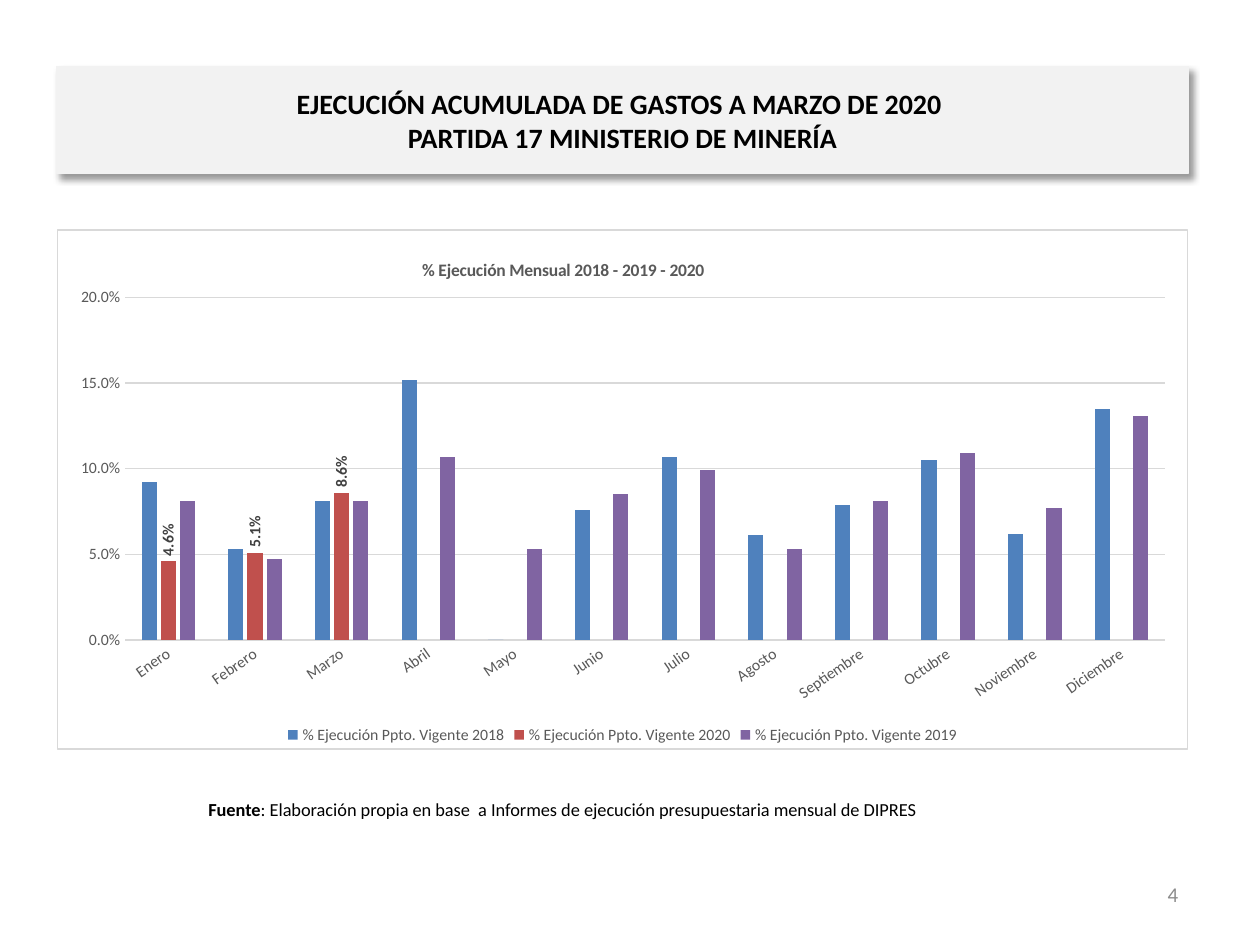
from lxml import etree
from pptx import Presentation
from pptx import util as u
from pptx.chart.data import CategoryChartData
from pptx.dml.color import RGBColor
from pptx.enum import chart as ch, shapes, text
from pptx.oxml import parse_xml
from pptx.oxml.ns import nsdecls, qn

THEME = {
    "font": "Calibri",
    "ink": "000000", "muted": "595959", "label": "404040", "page": "8C8C8C",
    "band": "F2F2F2", "rule": "D9D9D9", "paper": "FFFFFF",
    "heading_size": 16, "page_size": 12, "source_size": 10.5,
    "chart_title_size": 10, "chart_size": 9,
}

HEADING = ("EJECUCIÓN ACUMULADA DE GASTOS A MARZO DE 2020 \v"
           "PARTIDA 17 MINISTERIO DE MINERÍA")
SOURCE = [("Fuente", True),
          (": Elaboración propia en base  a Informes de ejecución "
           "presupuestaria mensual de DIPRES", False)]
PAGE = "4"
CHART_TITLE = "% Ejecución Mensual 2018 - 2019 - 2020"
MONTHS = ["Enero", "Febrero", "Marzo", "Abril", "Mayo", "Junio", "Julio",
          "Agosto", "Septiembre", "Octubre", "Noviembre", "Diciembre"]
# year, colour, monthly share of the budget
YEARS = [
    (2018, "4F81BD", [0.092, 0.053, 0.081, 0.152, 0, 0.076,
                      0.107, 0.061, 0.079, 0.105, 0.062, 0.135]),
    (2020, "C0504D", [0.046, 0.051, 0.086] + [None] * 9),
    (2019, "8064A2", [0.081, 0.047, 0.081, 0.107, 0.053, 0.085,
                      0.099, 0.053, 0.081, 0.109, 0.077, 0.131]),
]
LABELLED_YEAR = 2020
PERCENT = "0.0%"

LEFT, WIDTH = 0.45, 8.98


def box(left, top, width, height):
    return [u.Inches(n) for n in (left, top, width, height)]


def style_font(font, size, color, bold=False):
    font.name, font.size, font.bold = THEME["font"], u.Pt(size), bold
    font.color.rgb = RGBColor.from_string(color)


def write(frame, runs, size, color=THEME["ink"], align=text.PP_ALIGN.CENTER):
    """Fill a text frame with one paragraph of (wording, bold) runs."""
    frame.word_wrap = True
    frame.vertical_anchor = text.MSO_ANCHOR.MIDDLE
    paragraph = frame.paragraphs[0]
    paragraph.alignment = align
    for wording, bold in runs:
        for number, line in enumerate(wording.split("\v")):
            if number:
                paragraph.add_line_break()
            run = paragraph.add_run()
            run.text = line
            style_font(run.font, size, color, bold)


def draw_line(line, color):
    line.color.rgb = RGBColor.from_string(color)
    line.width = u.Pt(0.75)


def add_shadow(shape):
    shape.shadow.inherit = False
    effects = shape._element.spPr.find(qn("a:effectLst"))
    effects.append(parse_xml(
        f'<a:outerShdw {nsdecls("a")} blurRad="{u.Pt(4)}" dist="{u.Pt(3)}" '
        'dir="2700000" algn="tl" rotWithShape="0"><a:srgbClr val="000000">'
        '<a:alpha val="40000"/></a:srgbClr></a:outerShdw>'))


def place(parent, index, target=None, **fractions):
    """Set the manual layout of a chart part, as fractions of the chart."""
    for old in parent.findall(qn("c:layout")):
        parent.remove(old)
    layout = parse_xml(f'<c:layout {nsdecls("c")}/>')
    manual = etree.SubElement(layout, qn("c:manualLayout"))
    if target:
        etree.SubElement(manual, qn("c:layoutTarget")).set("val", target)
    for mode in ("xMode", "yMode"):
        etree.SubElement(manual, qn(f"c:{mode}")).set("val", "edge")
    for name, value in fractions.items():
        etree.SubElement(manual, qn(f"c:{name}")).set("val", str(value))
    parent.insert(index, layout)


def rotate_text(parent, degrees):
    body = parent.find(qn("c:txPr")).find(qn("a:bodyPr"))
    body.set("rot", str(degrees * 60000))
    body.set("vert", "horz")


def style_axes(chart):
    months, shares = chart.category_axis, chart.value_axis
    for axis in (months, shares):
        axis.major_tick_mark = axis.minor_tick_mark = ch.XL_TICK_MARK.NONE
        style_font(axis.tick_labels.font, THEME["chart_size"], THEME["muted"])
    draw_line(months.format.line, THEME["rule"])
    rotate_text(months._element, -35)
    shares.minimum_scale, shares.maximum_scale, shares.major_unit = 0, 0.2, 0.05
    shares.format.line.fill.background()
    draw_line(shares.major_gridlines.format.line, THEME["rule"])
    shares.tick_labels.number_format = PERCENT
    shares.tick_labels.number_format_is_linked = False


def style_series(plot):
    plot.gap_width, plot.overlap, plot.vary_by_categories = 219, -27, False
    for series, (year, color, _) in zip(plot.series, YEARS):
        series.format.fill.solid()
        series.format.fill.fore_color.rgb = RGBColor.from_string(color)
        series.invert_if_negative = False
        if year == LABELLED_YEAR:
            labels = series.data_labels
            labels.show_value = True
            labels.position = ch.XL_LABEL_POSITION.OUTSIDE_END
            labels.number_format = PERCENT
            labels.number_format_is_linked = False
            style_font(labels.font, THEME["chart_size"], THEME["label"], True)
            rotate_text(labels._element, -90)


def add_monthly_chart(slide):
    data = CategoryChartData(number_format=PERCENT)
    data.categories = MONTHS
    for year, _, shares in YEARS:
        data.add_series(f"% Ejecución Ppto. Vigente {year}", shares)
    chart = slide.shapes.add_chart(ch.XL_CHART_TYPE.COLUMN_CLUSTERED,
                                   *box(LEFT, 1.82, WIDTH, 4.13), data).chart
    style_font(chart.font, 10, THEME["ink"])
    chart.has_title = True
    write(chart.chart_title.text_frame, [(CHART_TITLE, True)],
          THEME["chart_title_size"], THEME["muted"])
    chart.has_legend = True
    chart.legend.position = ch.XL_LEGEND_POSITION.BOTTOM
    chart.legend.include_in_layout = False
    style_font(chart.legend.font, THEME["chart_size"], THEME["muted"])
    style_axes(chart)
    style_series(chart.plots[0])

    root = chart._chartSpace
    place(chart.chart_title._element, 1, x=0.32, y=0.05)
    place(root.chart.plotArea, 0, "inner", x=0.06, y=0.13, w=0.92, h=0.66)
    root.find(qn("c:txPr")).addprevious(parse_xml(
        f'<c:spPr {nsdecls("c", "a")}><a:solidFill><a:srgbClr '
        f'val="{THEME["paper"]}"/></a:solidFill><a:ln w="{u.Pt(0.75)}">'
        f'<a:solidFill><a:srgbClr val="{THEME["rule"]}"/></a:solidFill>'
        '</a:ln></c:spPr>'))


def main():
    deck = Presentation()
    deck.slide_width, deck.slide_height = u.Inches(10), u.Inches(7.5)
    slide = deck.slides.add_slide(deck.slide_layouts[6])

    page = slide.shapes.add_textbox(*box(7.12, 6.9, 2.33, 0.4))
    write(page.text_frame, [(PAGE, False)], THEME["page_size"], THEME["page"],
          text.PP_ALIGN.RIGHT)

    heading = slide.shapes.add_shape(shapes.MSO_SHAPE.RECTANGLE,
                                     *box(LEFT, 0.53, WIDTH, 0.85))
    heading.fill.solid()
    heading.fill.fore_color.rgb = RGBColor.from_string(THEME["band"])
    draw_line(heading.line, THEME["band"])
    add_shadow(heading)
    write(heading.text_frame, [(HEADING, True)], THEME["heading_size"])

    source = slide.shapes.add_textbox(*box(LEFT, 6.22, 8.03, 0.4))
    write(source.text_frame, SOURCE, THEME["source_size"])

    add_monthly_chart(slide)
    deck.save("out.pptx")


if __name__ == "__main__":
    main()
